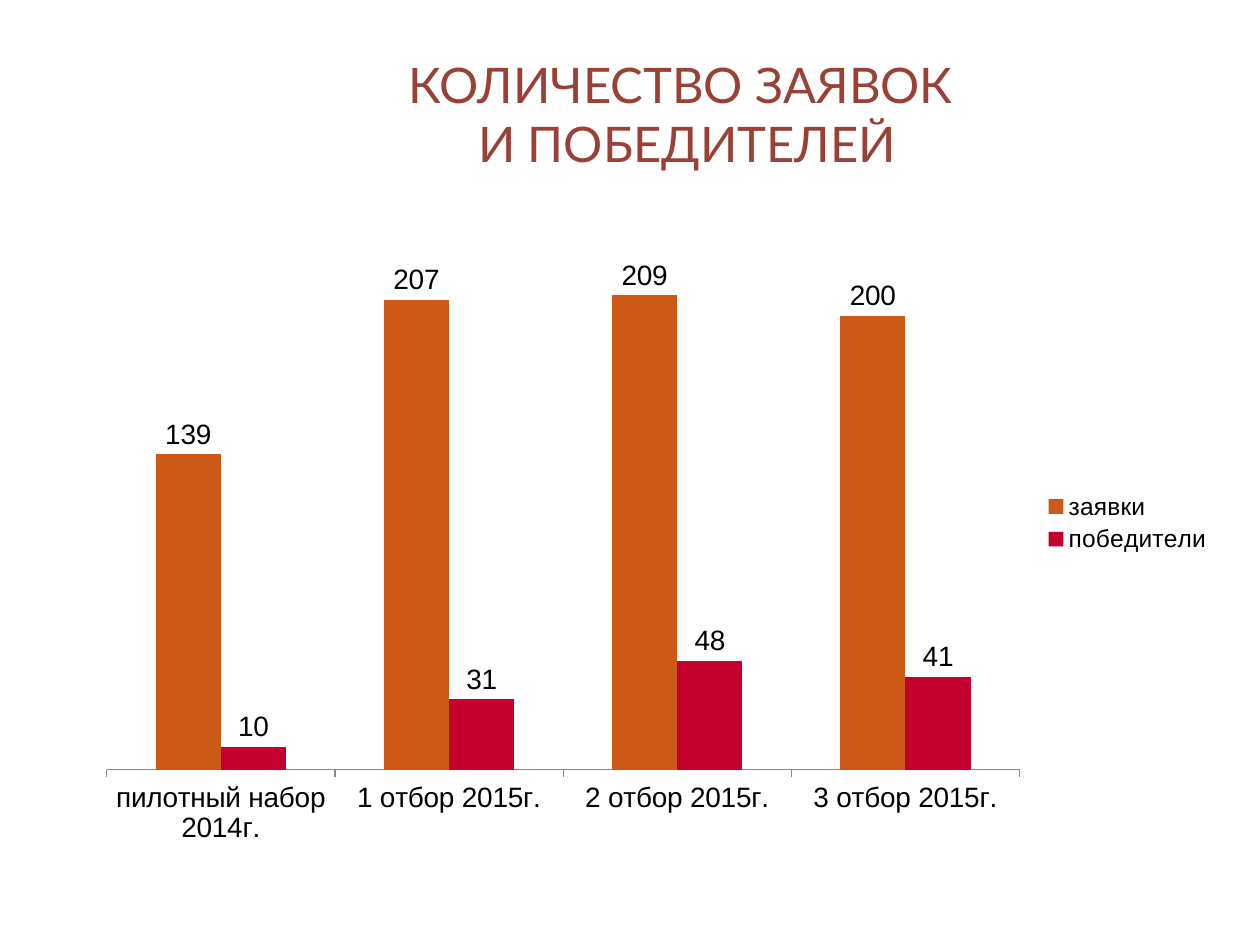
from lxml import etree
from pptx import Presentation
from pptx.chart.data import CategoryChartData
from pptx.dml.color import RGBColor
from pptx.enum.chart import XL_CHART_TYPE, XL_LABEL_POSITION, XL_LEGEND_POSITION, XL_TICK_MARK
from pptx.enum.text import MSO_ANCHOR, PP_ALIGN
from pptx.oxml.ns import qn
from pptx.util import Pt

COLUMNS = XL_CHART_TYPE.COLUMN_CLUSTERED
OUTSIDE_END = XL_LABEL_POSITION.OUTSIDE_END
RIGHT = XL_LEGEND_POSITION.RIGHT
TICK_OUT = XL_TICK_MARK.OUTSIDE

BLACK = RGBColor(0x00, 0x00, 0x00)
GRAY = RGBColor(0x87, 0x87, 0x87)
BROWN = RGBColor(0x99, 0x41, 0x36)
ORANGE = RGBColor(0xCD, 0x59, 0x16)
CRIMSON = RGBColor(0xC3, 0x00, 0x2E)

TITLE = "КОЛИЧЕСТВО ЗАЯВОК \vИ ПОБЕДИТЕЛЕЙ"
CATEGORIES = ["пилотный набор 2014г.", "1 отбор 2015г.", "2 отбор 2015г.", "3 отбор 2015г."]
SERIES = [
    ("заявки", [139, 207, 209, 200], ORANGE),
    ("победители", [10, 31, 48, 41], CRIMSON),
]
PLOT_AREA = {"x": 0.02, "y": 0.02, "w": 0.8, "h": 0.85}


def set_font(font, size, name="Arial", color=BLACK):
    font.size = Pt(size)
    font.name = name
    font.color.rgb = color


def place_plot(chart, fractions):
    """Fix the inner plot area as fractions of the chart frame."""
    plot_area = chart.plots[0]._element.getparent()
    for old in plot_area.findall(qn("c:layout")):
        plot_area.remove(old)
    layout = etree.Element(qn("c:layout"))
    plot_area.insert(0, layout)
    manual = etree.SubElement(layout, qn("c:manualLayout"))
    settings = {"layoutTarget": "inner", "xMode": "edge", "yMode": "edge", **fractions}
    for tag, value in settings.items():
        etree.SubElement(manual, qn(f"c:{tag}")).set("val", str(value))


def add_title(slide):
    tf = slide.shapes.add_textbox(Pt(178.5), Pt(31), Pt(428), Pt(68)).text_frame
    tf.word_wrap = True
    tf.vertical_anchor = MSO_ANCHOR.MIDDLE
    tf.text = TITLE
    p = tf.paragraphs[0]
    p.alignment = PP_ALIGN.CENTER
    for r in p.runs:
        set_font(r.font, 28, "Lato", BROWN)


def add_applications_chart(slide):
    data = CategoryChartData()
    data.categories = CATEGORIES
    for name, values, _ in SERIES:
        data.add_series(name, values)
    chart = slide.shapes.add_chart(COLUMNS, Pt(48), Pt(108), Pt(652), Pt(381.6), data).chart
    set_font(chart.font, 10)
    chart.has_title = False
    chart.has_legend = True
    chart.legend.position = RIGHT
    chart.legend.include_in_layout = False
    set_font(chart.legend.font, 14)

    axis = chart.category_axis
    axis.major_tick_mark = TICK_OUT
    axis.format.line.color.rgb = GRAY
    set_font(axis.tick_labels.font, 16)
    axis = chart.value_axis
    axis.minimum_scale, axis.maximum_scale = 0, 250
    axis.has_major_gridlines = False
    axis.visible = False

    plot = chart.plots[0]
    plot.gap_width = 150
    plot.overlap = 0
    plot.vary_by_categories = False
    for series, (_, _, color) in zip(plot.series, SERIES):
        series.format.fill.solid()
        series.format.fill.fore_color.rgb = color
        labels = series.data_labels
        labels.show_value = True
        labels.position = OUTSIDE_END
        set_font(labels.font, 16)
    place_plot(chart, PLOT_AREA)


prs = Presentation()
prs.slide_width, prs.slide_height = Pt(720), Pt(540)
s = prs.slides.add_slide(prs.slide_layouts[6])
add_title(s)
add_applications_chart(s)
prs.save("out.pptx")
